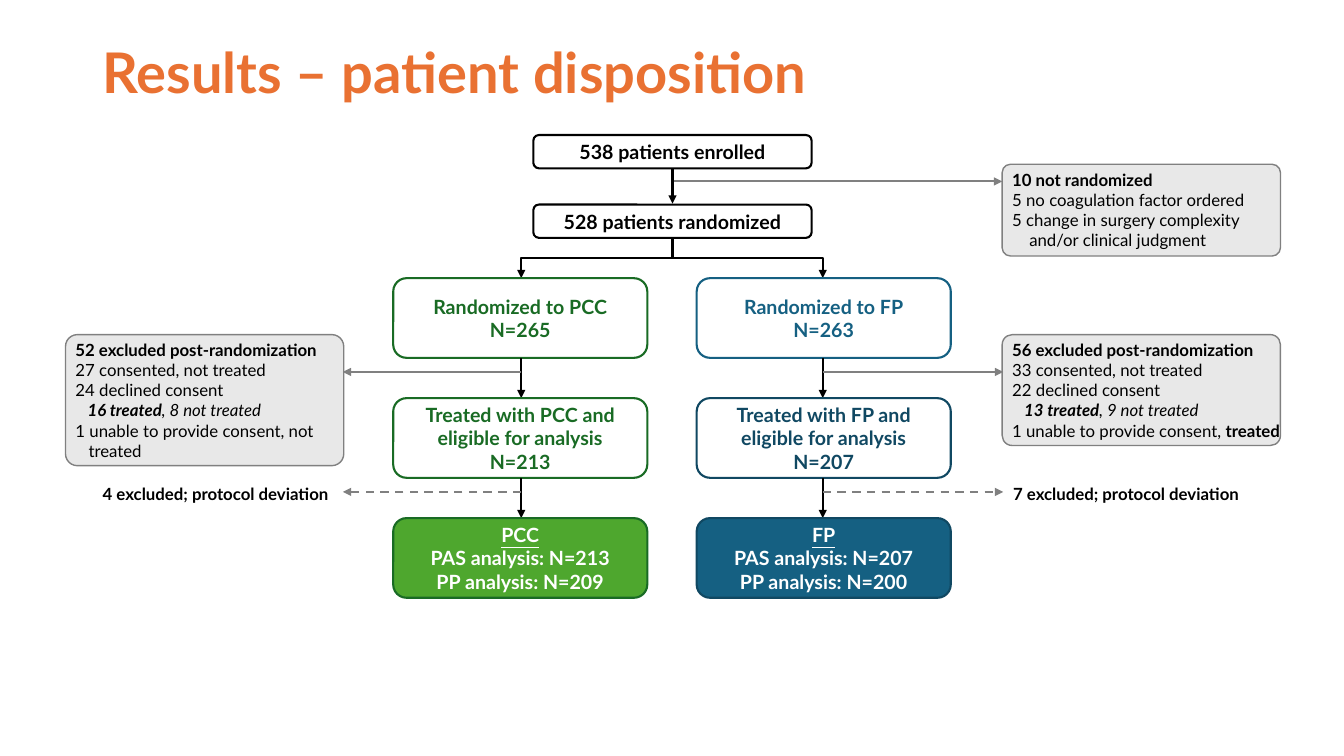
from dataclasses import dataclass

from lxml import etree
from pptx import Presentation
from pptx.dml.color import RGBColor
from pptx.enum.dml import MSO_LINE
from pptx.enum.shapes import MSO_CONNECTOR, MSO_SHAPE
from pptx.enum.text import MSO_ANCHOR, PP_ALIGN
from pptx.oxml.ns import qn
from pptx.util import Emu, Pt

EMU_PER_PX = 9144  # 100 px to the inch
ROUNDED = MSO_SHAPE.ROUNDED_RECTANGLE
STRAIGHT, ELBOW = MSO_CONNECTOR.STRAIGHT, MSO_CONNECTOR.ELBOW
TOP, MIDDLE = MSO_ANCHOR.TOP, MSO_ANCHOR.MIDDLE
LEFT, CENTER = PP_ALIGN.LEFT, PP_ALIGN.CENTER
DASH = MSO_LINE.DASH

FONT = "Lato"
BLACK, WHITE, GREY, PANEL_FILL = "000000", "FFFFFF", "808080", "E8E8E8"
ORANGE = "E97132"

TRUNK_X, TRUNK_WIDTH, TRUNK_HEIGHT = 667, 276, 33
STEP_TOP, STEP_PITCH, STEP_WIDTH, STEP_HEIGHT = 276, 119, 252, 79
PANEL_WIDTH, REASONS_WIDTH = 276, 290


@dataclass(frozen=True)
class Span:
    text: str
    bold: bool = False
    italic: bool = False


@dataclass(frozen=True)
class Reason:
    spans: tuple[Span, ...]
    margin: int = 0
    hanging: int = 0


@dataclass(frozen=True)
class Panel:
    left: int
    top: int
    height: int
    reasons: tuple[Reason, ...]


@dataclass(frozen=True)
class Step:
    text: str
    color: str
    border: str
    fill: str = WHITE
    underlined_heading: bool = False


@dataclass(frozen=True)
class Arm:
    left: int
    axis: int
    side_end: int
    steps: tuple[Step, ...]
    deviation: str
    deviation_left: int


def reason(text: str, bold: bool = False, hanging: int = 0) -> Reason:
    return Reason((Span(text, bold),), hanging, hanging)


def treated(count: str, rest: str) -> Reason:
    return Reason((Span(count, True, True), Span(rest, italic=True)), 12)


PANELS = (
    Panel(994, 163, 91, (
        reason("10 not randomized", True),
        reason("5 no coagulation factor ordered"),
        reason("5 change in surgery complexity\vand/or clinical judgment", hanging=17))),
    Panel(994, 332, 110, (
        reason("56 excluded post-randomization", True),
        reason("33 consented, not treated"),
        reason("22 declined consent"),
        treated("13 treated", ", 9 not treated"),
        Reason((Span("1 unable to provide consent, "), Span("treated", True))))),
    Panel(65, 332, 130, (
        reason("52 excluded post-randomization", True),
        reason("27 consented, not treated"),
        reason("24 declined consent"),
        treated("16 treated", ", 8 not treated"),
        reason("1 unable to provide consent, not\vtreated", hanging=13))),
)

GREEN, BLUE, NAVY = "196B24", "156082", "104862"
ARMS = (
    Arm(390, 517, 340, (
        Step("Randomized to PCC\nN=265", GREEN, GREEN),
        Step("Treated with PCC and eligible for analysis\nN=213", GREEN, GREEN),
        Step("PCC\nPAS analysis: N=213\nPP analysis: N=209", WHITE, GREEN, "4EA72E", True),
    ), "4 excluded; protocol deviation", 92),
    Arm(691, 816, 995, (
        Step("Randomized to FP\nN=263", BLUE, BLUE),
        Step("Treated with FP and eligible for analysis\nN=207", NAVY, NAVY),
        Step("FP\nPAS analysis: N=207\nPP analysis: N=200", WHITE, NAVY, BLUE, True),
    ), "7 excluded; protocol deviation", 995),
)


def px(length: float) -> Emu:
    return Emu(round(length * EMU_PER_PX))


def rgb(color: str) -> RGBColor:
    return RGBColor.from_string(color)


def style_font(font, size: int, color: str, bold: bool = True, italic: bool = False) -> None:
    font.name, font.size = FONT, Pt(size)
    font.bold, font.italic = bold, italic
    font.color.rgb = rgb(color)


def add_box(slide, left: int, top: int, width: int, height: int, fill: str, border: str,
            border_width: float = 1.5):
    box = slide.shapes.add_shape(ROUNDED, px(left), px(top), px(width), px(height))
    box.shadow.inherit = False
    box.fill.solid()
    box.fill.fore_color.rgb = rgb(fill)
    box.line.color.rgb = rgb(border)
    box.line.width = Pt(border_width)
    return box


def add_step(slide, step: Step, left: int, top: int, width: int, height: int) -> None:
    frame = add_box(slide, left, top, width, height, step.fill, step.border).text_frame
    frame.word_wrap = True
    frame.vertical_anchor = MIDDLE
    frame.text = step.text
    for position, paragraph in enumerate(frame.paragraphs):
        paragraph.alignment = CENTER
        for run in paragraph.runs:
            style_font(run.font, 14, step.color)
            run.font.underline = step.underlined_heading and position == 0


def add_reasons(slide, left: int, top: int, width: int, height: int,
                reasons: tuple[Reason, ...]) -> None:
    frame = slide.shapes.add_textbox(px(left), px(top), px(width), px(height)).text_frame
    frame.word_wrap = True
    for position, item in enumerate(reasons):
        paragraph = frame.add_paragraph() if position else frame.paragraphs[0]
        properties = paragraph._p.get_or_add_pPr()
        properties.set("marL", str(px(item.margin)))
        properties.set("indent", str(px(-item.hanging)))
        for span in item.spans:
            for line_number, line in enumerate(span.text.split("\v")):
                if line_number:
                    paragraph.add_line_break()
                run = paragraph.add_run()
                run.text = line
                style_font(run.font, 12, BLACK, span.bold, span.italic)


def add_panel(slide, panel: Panel) -> None:
    box = add_box(slide, panel.left, panel.top, PANEL_WIDTH, panel.height, PANEL_FILL, GREY, 1)
    box.adjustments[0] = 0.09
    add_reasons(slide, panel.left, panel.top, REASONS_WIDTH, panel.height, panel.reasons)


def add_arrow(slide, x1: float, y1: float, x2: float, y2: float, color: str = BLACK,
              dashed: bool = False, kind=STRAIGHT):
    arrow = slide.shapes.add_connector(kind, px(x1), px(y1), px(x2), px(y2))
    arrow.line.color.rgb = rgb(color)
    arrow.line.width = Pt(1.5)
    if dashed:
        arrow.line.dash_style = DASH
    etree.SubElement(arrow.line._get_or_add_ln(), qn("a:tailEnd"), type="triangle")
    etree.SubElement(arrow._element.spPr, qn("a:effectLst"))
    return arrow


def add_branch(slide, x1: int, y1: int, x2: int, y2: int) -> None:
    """Draw an elbow arrow that leaves downwards: a sideways elbow, turned a quarter."""
    middle_x, middle_y = (x1 + x2) / 2, (y1 + y2) / 2
    half_run, half_drop = abs(x2 - x1) / 2, (y2 - y1) / 2
    side, degrees = (1, 270) if x2 > x1 else (-1, 90)
    arrow = add_arrow(slide, middle_x + side * half_drop, middle_y - half_run,
                      middle_x - side * half_drop, middle_y + half_run, kind=ELBOW)
    arrow._element.spPr.find(qn("a:xfrm")).set("rot", str(degrees * 60000))


def add_title(slide, text: str) -> None:
    title = slide.shapes.title
    title.left, title.top, title.width, title.height = px(92), px(40), px(1150), px(145)
    title.text_frame.text = text
    title.text_frame.vertical_anchor = TOP
    paragraph = title.text_frame.paragraphs[0]
    paragraph.alignment = LEFT
    paragraph.line_spacing = 0.9
    style_font(paragraph.runs[0].font, 40, ORANGE)


def add_arm(slide, arm: Arm) -> None:
    add_branch(slide, TRUNK_X, 236, arm.axis, STEP_TOP)
    for position, step in enumerate(arm.steps):
        top = STEP_TOP + position * STEP_PITCH
        add_step(slide, step, arm.left, top, STEP_WIDTH, STEP_HEIGHT)
        if position < len(arm.steps) - 1:
            bottom = top + STEP_HEIGHT
            add_arrow(slide, arm.axis, bottom, arm.axis, top + STEP_PITCH)
            add_arrow(slide, arm.axis, bottom + 14, arm.side_end, bottom + 14, GREY, position == 1)
    add_reasons(slide, arm.deviation_left, 475, 270, 35, (reason(arm.deviation, True),))


def main() -> None:
    deck = Presentation()
    deck.slide_width, deck.slide_height = px(1333), px(750)
    slide = deck.slides.add_slide(deck.slide_layouts[5])
    add_title(slide, "Results – patient disposition")
    for text, top in (("538 patients enrolled", 134), ("528 patients randomized", 203)):
        add_step(slide, Step(text, BLACK, BLACK), 529, top, TRUNK_WIDTH, TRUNK_HEIGHT)
    add_arrow(slide, TRUNK_X, 180, 994, 180, GREY)
    add_arrow(slide, TRUNK_X, 167, TRUNK_X, 202)
    for panel in PANELS:
        add_panel(slide, panel)
    for arm in ARMS:
        add_arm(slide, arm)
    deck.save("out.pptx")


if __name__ == "__main__":
    main()
